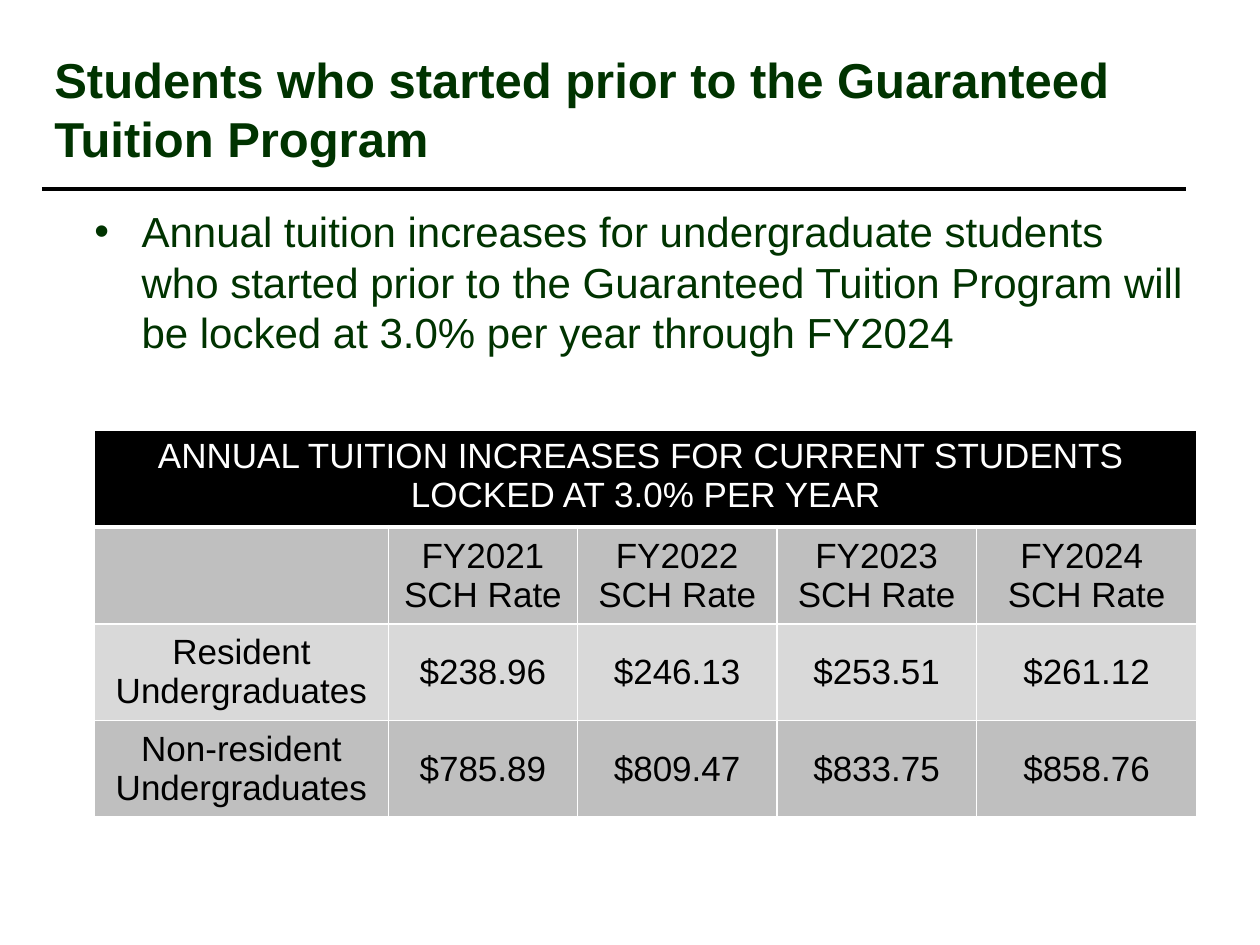
from lxml import etree
from pptx import Presentation
from pptx.dml.color import RGBColor
from pptx.enum.shapes import MSO_CONNECTOR
from pptx.enum.text import MSO_ANCHOR, PP_ALIGN
from pptx.oxml.ns import qn
from pptx.util import Pt

STRAIGHT = MSO_CONNECTOR.STRAIGHT
TOP, MIDDLE = MSO_ANCHOR.TOP, MSO_ANCHOR.MIDDLE
LEFT, CENTER = PP_ALIGN.LEFT, PP_ALIGN.CENTER

GREEN, BLACK, WHITE = "003300", "000000", "FFFFFF"
DARK_BAND, LIGHT_BAND = "BFBFBF", "D9D9D9"

BANNER = "ANNUAL TUITION INCREASES FOR CURRENT STUDENTS \nLOCKED AT 3.0% PER YEAR"
RATES = [
    ["", "FY2021\nSCH Rate", "FY2022\nSCH Rate", "FY2023\nSCH Rate", "FY2024 \nSCH Rate"],
    ["Resident Undergraduates", "$238.96", "$246.13", "$253.51", "$261.12"],
    ["Non-resident Undergraduates", "$785.89", "$809.47", "$833.75", "$858.76"],
]


def color(code):
    return RGBColor.from_string(code)


class SlideBuilder:
    font = "Arial"

    def __init__(self, slide):
        self.slide = slide

    def fill_text(self, frame, text, size, code, bold=False, align=LEFT):
        frame.text = text
        for paragraph in frame.paragraphs:
            paragraph.alignment = align
            paragraph.font.size = Pt(size)
            for run in paragraph.runs:
                run.font.name = self.font
                run.font.size = Pt(size)
                run.font.bold = bold
                run.font.color.rgb = color(code)

    def text(self, box, text, size, code, bold=False, anchor=TOP):
        frame = self.slide.shapes.add_textbox(*map(Pt, box)).text_frame
        frame.word_wrap = True
        frame.vertical_anchor = anchor
        self.fill_text(frame, text, size, code, bold)
        return frame

    def bullet(self, box, text, size, code, indent):
        paragraph = self.text(box, text, size, code).paragraphs[0]
        paragraph.space_before = Pt(size * 0.2)
        properties = paragraph._p.get_or_add_pPr()
        properties.set("marL", str(Pt(indent)))
        properties.set("indent", str(-Pt(indent)))
        bullet_font = etree.Element(qn("a:buFont"), typeface=self.font)
        bullet_mark = etree.Element(qn("a:buChar"), char="•")
        defaults = properties.find(qn("a:defRPr"))
        defaults.addprevious(bullet_font)
        defaults.addprevious(bullet_mark)

    def rule(self, x1, y1, x2, y2, code, width):
        line = self.slide.shapes.add_connector(STRAIGHT, *map(Pt, (x1, y1, x2, y2)))
        line.line.color.rgb = color(code)
        line.line.width = Pt(width)
        etree.SubElement(line._element.spPr, qn("a:effectLst"))

    def cell(self, cell, text, size, code, fill, anchor=MIDDLE, bottom=1):
        cell.fill.solid()
        cell.fill.fore_color.rgb = color(fill)
        cell.vertical_anchor = anchor
        self.fill_text(cell.text_frame, text, size, code, align=CENTER)
        properties = cell._tc.get_or_add_tcPr()
        borders = {"a:lnL": 1, "a:lnR": 1, "a:lnT": 1, "a:lnB": bottom}
        for position, (side, width) in enumerate(borders.items()):
            border = etree.Element(qn(side), w=str(Pt(width)))
            solid = etree.SubElement(border, qn("a:solidFill"))
            etree.SubElement(solid, qn("a:srgbClr"), val=WHITE)
            properties.insert(position, border)

    def table(self, left, top, widths, row_height, banner, rows, size):
        box = (left, top, sum(widths), row_height * (len(rows) + 1))
        table = self.slide.shapes.add_table(
            len(rows) + 1, len(widths), *map(Pt, box)).table
        for column, width in zip(table.columns, widths):
            column.width = Pt(width)
        for row in table.rows:
            row.height = Pt(row_height)
        for index in range(len(widths)):
            self.cell(table.cell(0, index), "", size, WHITE, BLACK, TOP, 3)
        table.cell(0, 0).merge(table.cell(0, len(widths) - 1))
        self.fill_text(table.cell(0, 0).text_frame, banner, size, WHITE, align=CENTER)
        for number, values in enumerate(rows, 1):
            fill = DARK_BAND if number % 2 else LIGHT_BAND
            for index, value in enumerate(values):
                self.cell(table.cell(number, index), value, size, BLACK, fill)


def main():
    deck = Presentation()
    deck.slide_width, deck.slide_height = Pt(720), Pt(540)
    builder = SlideBuilder(deck.slides.add_slide(deck.slide_layouts[6]))
    builder.bullet((46.8, 114, 637.2, 108),
                   "Annual tuition increases for undergraduate students who started prior to "
                   "the Guaranteed Tuition Program will be locked at 3.0% per year through FY2024",
                   24, GREEN, 27)
    builder.text((24, 18, 678, 88),
                 "Students who started prior to the Guaranteed Tuition Program",
                 28, GREEN, True, MIDDLE)
    builder.table(54, 246, [168, 108, 114, 114, 126], 49.7, BANNER, RATES, 20)
    builder.rule(24, 108, 678, 108, BLACK, 2.25)
    deck.save("out.pptx")


if __name__ == "__main__":
    main()
